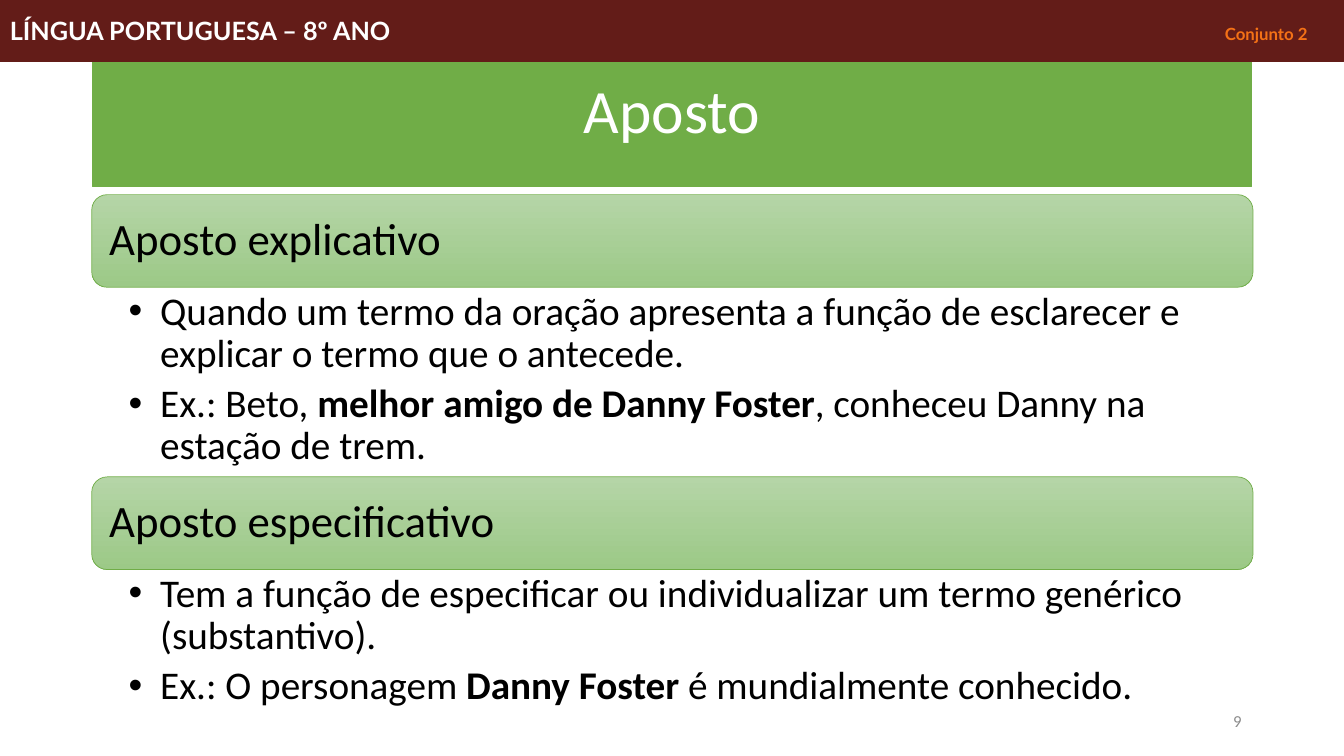
from lxml.etree import SubElement
from pptx import Presentation
from pptx.dml.color import RGBColor
from pptx.enum.shapes import MSO_SHAPE
from pptx.enum.text import MSO_ANCHOR, MSO_AUTO_SIZE, PP_ALIGN
from pptx.oxml.ns import qn
from pptx.util import Pt

HEADER = ("LÍNGUA PORTUGUESA – 8º ANO\t", "Conjunto 2")
TITLE = "Aposto"
PAGE_NUMBER = "9"
SECTIONS = [
    ("Aposto explicativo", 135.4, [
        [("Quando um termo da oração apresenta a função de esclarecer e explicar "
          "o termo que o antecede.", False)],
        [("Ex.: Beto, ", False), ("melhor amigo de Danny Foster", True),
         (", conheceu Danny na estação de trem.", False)],
    ]),
    ("Aposto especificativo", 106.6, [
        [("Tem a função de especificar ou individualizar um termo genérico "
          "(substantivo).", False)],
        [("Ex.: O personagem ", False), ("Danny Foster ", True),
         ("é mundialmente conhecido.", False)],
    ]),
]

WHITE = RGBColor(0xFF, 0xFF, 0xFF)
BLACK = RGBColor(0x00, 0x00, 0x00)
GREEN = RGBColor(0x70, 0xAD, 0x47)
LIGHT_GREEN = RGBColor(0xB5, 0xD5, 0xA7)
MID_GREEN = RGBColor(0x9C, 0xC9, 0x87)
MAROON = RGBColor(0x63, 0x1C, 0x18)
ORANGE = RGBColor(0xF4, 0x71, 0x16)
GRAY = RGBColor(0x8C, 0x8C, 0x8C)

PAGE_WIDTH, PAGE_HEIGHT = 960, 540
PANEL_LEFT, PANEL_WIDTH = 65.5, 829.5
PANEL_TOP, HEADING_HEIGHT = 139, 66.2
BULLET_INDENT = 22.5
HEADER_TAB = 927


def place(shape, left, top, width, height):
    shape.left, shape.top = Pt(left), Pt(top)
    shape.width, shape.height = Pt(width), Pt(height)


def format_frame(frame, anchor, left=7.2, right=7.2, vertical=3.6):
    frame.word_wrap = True
    frame.auto_size = MSO_AUTO_SIZE.NONE
    frame.vertical_anchor = anchor
    frame.margin_left, frame.margin_right = Pt(left), Pt(right)
    frame.margin_top = frame.margin_bottom = Pt(vertical)


def add_span(para, text, size, color, font="Calibri", bold=False):
    span = para.add_run()
    span.text = text
    span.font.name, span.font.size, span.font.bold = font, Pt(size), bold
    span.font.color.rgb = color


def set_paragraph(para, align=PP_ALIGN.LEFT, spacing=0.9, after=0):
    para.alignment = align
    para.line_spacing = spacing
    para.space_before, para.space_after = Pt(0), Pt(after)


def paint(shape, fill, line, weight):
    shape.fill.solid()
    shape.fill.fore_color.rgb = fill
    shape.line.color.rgb = line
    shape.line.width = Pt(weight)


def add_title(page):
    title = page.shapes.title
    place(title, 66, 29, 828, 104.4)
    paint(title, GREEN, GREEN, 1)
    format_frame(title.text_frame, MSO_ANCHOR.MIDDLE)
    para = title.text_frame.paragraphs[0]
    set_paragraph(para, PP_ALIGN.CENTER)
    add_span(para, TITLE, 44, WHITE)


def add_heading(page, text, top):
    box = page.shapes.add_shape(MSO_SHAPE.ROUNDED_RECTANGLE, 0, 0, 0, 0)
    place(box, PANEL_LEFT, top, PANEL_WIDTH, HEADING_HEIGHT)
    box.shadow.inherit = False
    box.fill.gradient()
    box.fill.gradient_angle = 270
    for stop, color in zip(box.fill.gradient_stops, (LIGHT_GREEN, MID_GREEN)):
        stop.color.rgb = color
    box.line.color.rgb = GREEN
    box.line.width = Pt(0.5)
    format_frame(box.text_frame, MSO_ANCHOR.MIDDLE, 9.3, 9.3)
    para = box.text_frame.paragraphs[0]
    set_paragraph(para)
    add_span(para, text, 32, BLACK)


def fill_list(body, items, top, height):
    place(body, PANEL_LEFT, top, PANEL_WIDTH, height)
    frame = body.text_frame
    format_frame(frame, MSO_ANCHOR.TOP, 26.4, 16, 2.8)
    for index, spans in enumerate(items):
        para = frame.add_paragraph() if index else frame.paragraphs[0]
        set_paragraph(para, after=5.6)
        properties = para._p.get_or_add_pPr()
        properties.set("marL", str(Pt(BULLET_INDENT)))
        properties.set("indent", str(-Pt(BULLET_INDENT)))
        SubElement(properties, qn("a:buFont")).set("typeface", "Arial")
        SubElement(properties, qn("a:buChar")).set("char", "•")
        for text, bold in spans:
            add_span(para, text, 28, BLACK, bold=bold)


def add_page_number(page):
    box = page.shapes.add_textbox(Pt(678), Pt(500.5), Pt(216), Pt(28.8))
    format_frame(box.text_frame, MSO_ANCHOR.MIDDLE)
    para = box.text_frame.paragraphs[0]
    set_paragraph(para, PP_ALIGN.RIGHT, 1.0)
    add_span(para, PAGE_NUMBER, 12, GRAY)


def add_header(page):
    bar = page.shapes.add_shape(MSO_SHAPE.RECTANGLE, 0, 0, Pt(PAGE_WIDTH), Pt(44))
    bar.shadow.inherit = False
    paint(bar, MAROON, MAROON, 0.75)
    format_frame(bar.text_frame, MSO_ANCHOR.MIDDLE)
    para = bar.text_frame.paragraphs[0]
    set_paragraph(para, spacing=1.0)
    tabs = SubElement(para._p.get_or_add_pPr(), qn("a:tabLst"))
    tab = SubElement(tabs, qn("a:tab"))
    tab.set("pos", str(Pt(HEADER_TAB)))
    tab.set("algn", "r")
    subject, group = HEADER
    add_span(para, subject, 18, WHITE, "Lato", True)
    add_span(para, group, 12, ORANGE, "Lato", True)


def main():
    deck = Presentation()
    deck.slide_width, deck.slide_height = Pt(PAGE_WIDTH), Pt(PAGE_HEIGHT)
    page = deck.slides.add_slide(deck.slide_layouts[3])
    add_title(page)
    top = PANEL_TOP
    bodies = list(page.placeholders)[1:]
    for body, (heading, height, items) in zip(bodies, SECTIONS):
        add_heading(page, heading, top)
        top += HEADING_HEIGHT
        fill_list(body, items, top, height)
        top += height
    add_page_number(page)
    add_header(page)
    deck.save("out.pptx")


if __name__ == "__main__":
    main()
